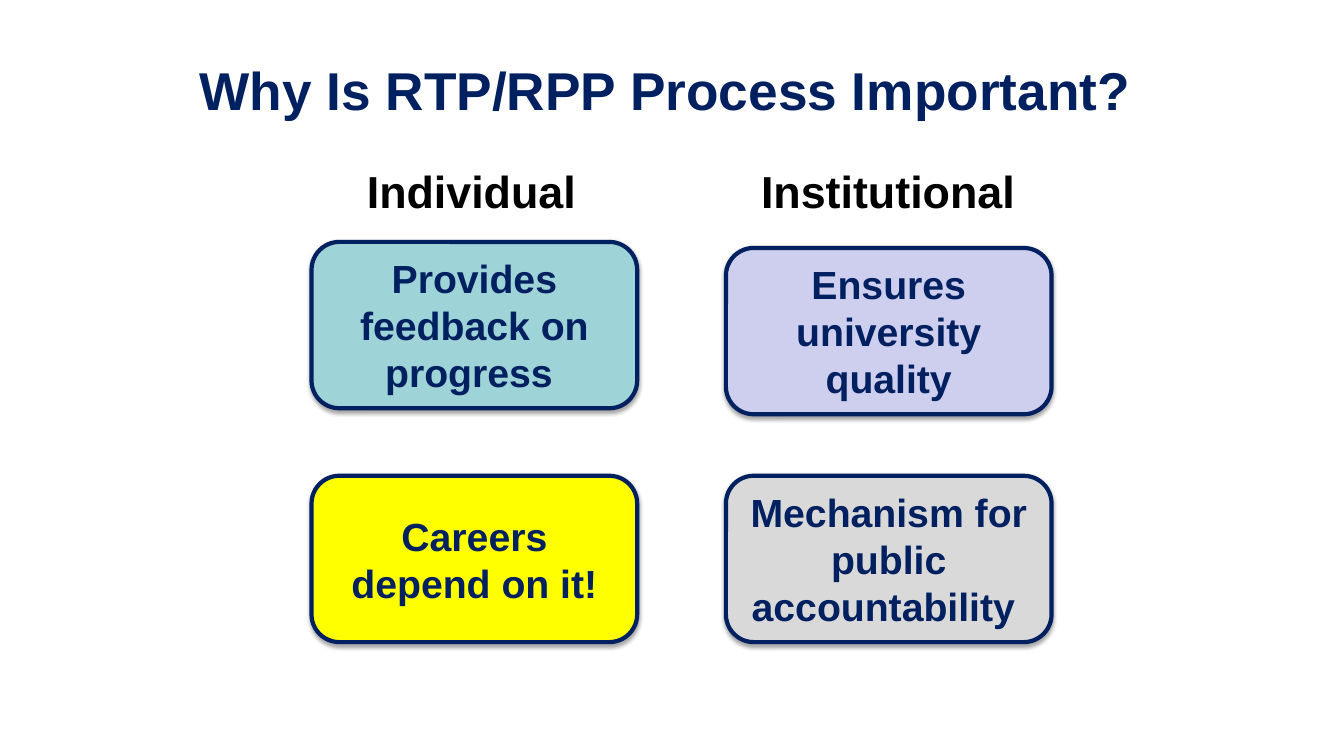
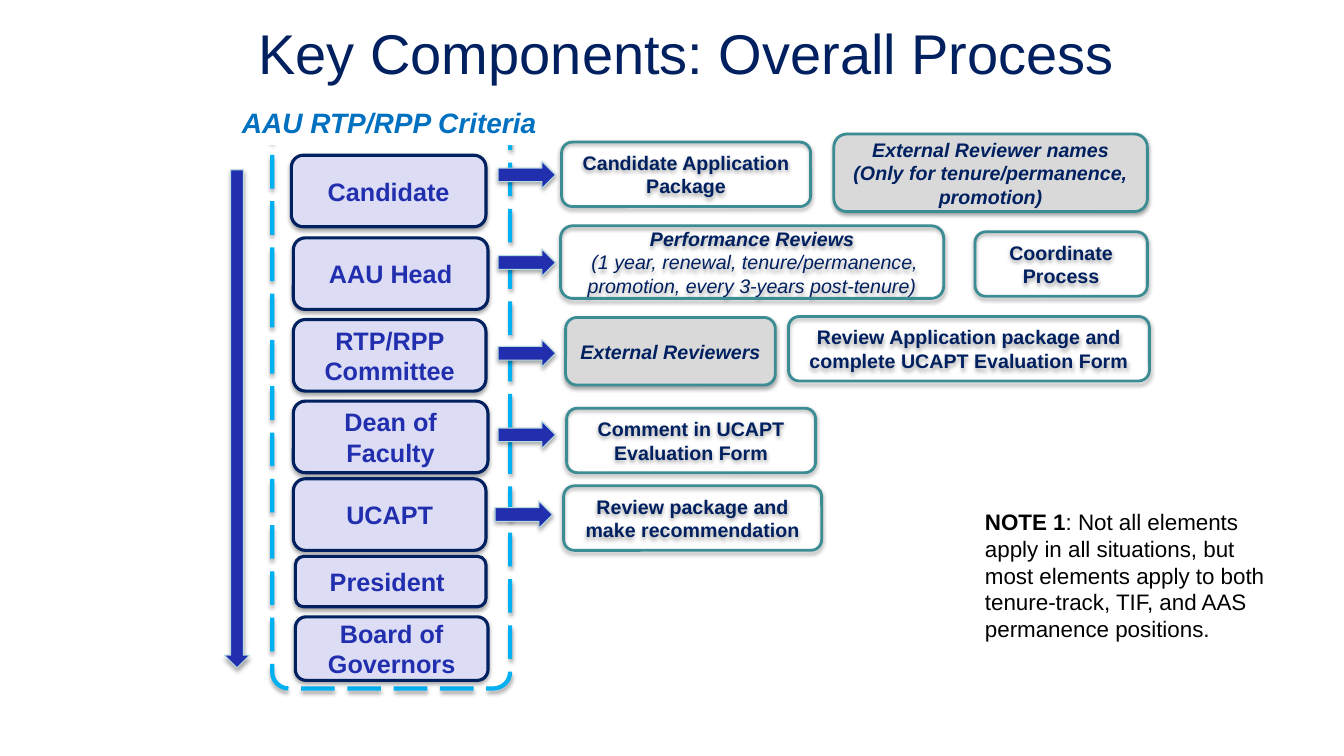
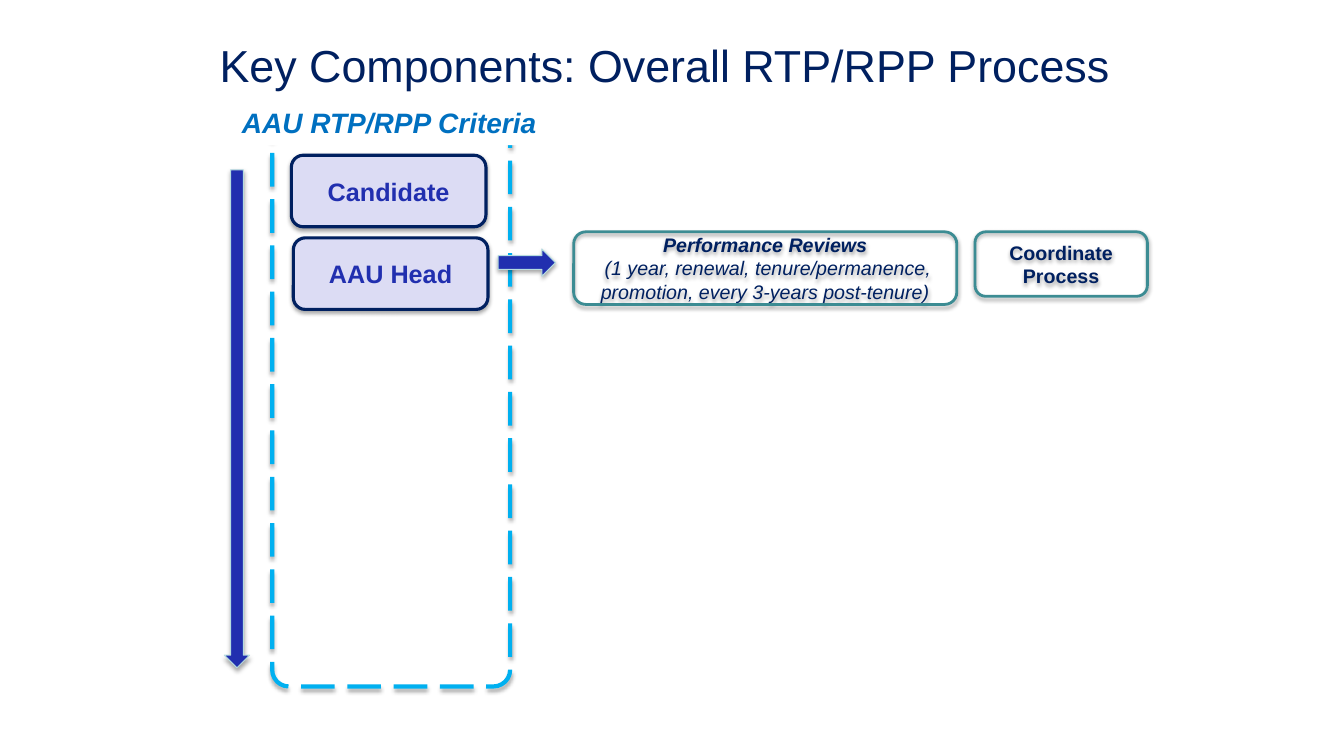
import lxml.etree
import pptx
import pptx.dml.color
import pptx.enum.dml
import pptx.enum.shapes
import pptx.enum.text
import pptx.oxml
import pptx.oxml.ns
import pptx.util

COLORS = {
    "navy": "002060", "indigo": "212FAF", "lavender": "DCDCF4", "lilac": "CECEEF",
    "aqua": "9ED3D7", "yellow": "FFFF00", "grey": "D9D9D9", "teal": "3C8C93",
    "mist": "B6DCDF", "sky": "00B0F0", "blue": "0070C0", "black": "000000", "white": "FFFFFF",
}
FONT = "Arial"
SHADOW = (
    '<a:effectLst xmlns:a="http://schemas.openxmlformats.org/drawingml/2006/main">'
    '<a:outerShdw blurRad="39370" dist="22860" dir="5400000" rotWithShape="0">'
    '<a:srgbClr val="000000"><a:alpha val="35000"/></a:srgbClr>'
    '</a:outerShdw></a:effectLst>'
)
PRESET = pptx.enum.shapes.MSO_SHAPE
LEFT = pptx.enum.text.PP_ALIGN.LEFT
CENTER = pptx.enum.text.PP_ALIGN.CENTER

deck = pptx.Presentation()
deck.slide_width = pptx.util.Inches(13.33)
deck.slide_height = pptx.util.Inches(7.5)
COLUMN = deck.slide_width / 133.3
ROW = deck.slide_height / 75
BLANK = deck.slide_layouts[6]


def add_block(slide, preset, place, fill, line, weight):
    left, top, width, height = place
    block = slide.shapes.add_shape(
        preset, round(left * COLUMN), round(top * ROW), round(width * COLUMN), round(height * ROW))
    if fill:
        block.fill.solid()
        block.fill.fore_color.rgb = pptx.dml.color.RGBColor.from_string(COLORS[fill])
    else:
        block.fill.background()
    block.line.color.rgb = pptx.dml.color.RGBColor.from_string(COLORS[line])
    block.line.width = pptx.util.Pt(weight)
    block.shadow.inherit = False
    effects = block._element.spPr.find(pptx.oxml.ns.qn("a:effectLst"))
    effects.getparent().replace(effects, pptx.oxml.parse_xml(SHADOW))
    return block


def add_text(slide, target, text, size, color, bold=False, italic=False, align=CENTER):
    if isinstance(target, tuple):
        left, top, width, height = target
        target = slide.shapes.add_textbox(
            round(left * COLUMN), round(top * ROW), round(width * COLUMN), round(height * ROW))
        target.text_frame.word_wrap = True
    target.text_frame.text = text
    for paragraph in target.text_frame.paragraphs:
        paragraph.alignment = align
        paragraph.font.name = FONT
        paragraph.font.size = pptx.util.Pt(size)
        paragraph.font.bold = bold
        paragraph.font.italic = italic
        paragraph.font.color.rgb = pptx.dml.color.RGBColor.from_string(COLORS[color])
    return target


TITLES = [
    ("Why Is RTP/RPP Process Important?", (18.8, 5.1, 95.7, 7.4), 38, True, LEFT),
    ("Key Components: Overall Process", (22.3, 1.3, 91.5, 7.7), 40, False, CENTER),
    ("Key Components: Overall RTP/RPP Process", (20.8, 3.2, 94, 6.4), 32, False, LEFT),
]
slides = []
for wording, place, size, bold, align in TITLES:
    slide = deck.slides.add_slide(BLANK)
    title = add_text(slide, place, wording, size, "navy", bold, align=align)
    title.text_frame.vertical_anchor = pptx.enum.text.MSO_ANCHOR.BOTTOM
    slides.append(slide)
importance, overall, head_stage = slides

REASONS = [
    ("Individual", 35.4, 22.9, 30.9, [
        ("Provides feedback on progress ", 24, "aqua"),
        ("Careers depend on it!", 47.2, "yellow")]),
    ("Institutional", 74.5, 27.4, 72, [
        ("Ensures university quality", 24.6, "lilac"),
        ("Mechanism for public accountability ", 47.2, "grey")]),
]
for heading, heading_left, heading_width, left, cards in REASONS:
    label = add_text(importance, (heading_left, 15.8, heading_width, 6.4), heading, 32, "black", True, align=LEFT)
    label.text_frame.word_wrap = False
    for reason, top, fill in cards:
        card = add_block(importance, PRESET.ROUNDED_RECTANGLE, (left, top, 32.3, 16.5), fill, "navy", 3)
        add_text(importance, card, reason, 28, "navy", True)

STEPS = [
    ("Candidate", (28.9, 15.4, 19.3, 7.1)),
    ("AAU Head", (29.1, 23.6, 19.3, 7.1)),
    ("RTP/RPP Committee", (29.1, 31.7, 19.1, 7.1)),
    ("Dean of Faculty", (29.1, 39.8, 19.3, 7.1)),
    ("UCAPT", (29.1, 47.5, 19.1, 7.1)),
    ("President ", (29.3, 55.2, 18.9, 5)),
    ("Board of Governors", (29.3, 61.2, 19.1, 6.3)),
]
HEAD_ARROW = (49.4, 24.7)
REVIEWS = "Performance Reviews\n (1 year, renewal, tenure/permanence, promotion, every 3-years post-tenure)"
COORDINATE = ("Coordinate Process", (96.7, 23, 17.1, 6.4), None, False)
OUTPUTS = [
    ("Candidate Application Package", (55.7, 14.1, 24.7, 6.4), None, False),
    ("External Reviewer names (Only for tenure/permanence, promotion)", (82.7, 13.3, 31.1, 7.7), "grey", True),
    (REVIEWS, (55.6, 22.4, 38, 7.2), None, True),
    COORDINATE,
    ("External Reviewers", (56.1, 31.5, 20.8, 6.7), "grey", True),
    ("Review Application package and complete UCAPT Evaluation Form", (78.2, 31.4, 35.8, 6.4), None, False),
    ("Comment in UCAPT Evaluation Form", (56.2, 40.5, 24.7, 6.4), None, False),
    ("Review package and make recommendation", (55.9, 48.2, 25.6, 6.4), None, False),
]
PROCESSES = [
    (overall, 12.4, STEPS,
     [(49.4, 16), HEAD_ARROW, (49.4, 33.7), (49.4, 41.8), (49.1, 49.7)], OUTPUTS),
    (head_stage, 12.2, STEPS[:2], [HEAD_ARROW],
     [(REVIEWS, (56.9, 23, 38, 7.2), None, True), COORDINATE]),
]
for slide, criteria_top, steps, arrows, outputs in PROCESSES:
    criteria_frame = add_block(
        slide, PRESET.ROUNDED_RECTANGLE, (27, criteria_top, 23.6, 55.9), None, "sky", 3)
    criteria_frame.adjustments[0] = 0.07
    criteria_frame.line.dash_style = pptx.enum.dml.MSO_LINE.LONG_DASH

    timeline = add_block(slide, PRESET.RIGHT_ARROW, (-1.2, 40.3, 49.4, 2.5), "indigo", "mist", 0.75)
    timeline.rotation = 90

    for step, place in steps:
        step_box = add_block(slide, PRESET.ROUNDED_RECTANGLE, place, "lavender", "navy", 2.25)
        add_text(slide, step_box, step, 18, "indigo", True)
    for left, top in arrows:
        add_block(slide, PRESET.RIGHT_ARROW, (left, top, 5.7, 2.7), "indigo", "mist", 0.75)
    for output, place, fill, italic in outputs:
        output_box = add_block(slide, PRESET.ROUNDED_RECTANGLE, place, fill, "teal", 2)
        add_text(slide, output_box, output, 14, "navy", True, italic)
        for detail in output_box.text_frame.paragraphs[1:]:
            detail.font.bold = False

    criteria = add_text(slide, (22.9, 10, 31.4, 4.4), "AAU RTP/RPP Criteria", 20, "blue", True, True)
    criteria.fill.solid()
    criteria.fill.fore_color.rgb = pptx.dml.color.RGBColor.from_string(COLORS["white"])

note = add_text(overall, (96.7, 49.9, 29.8, 14.5), "NOTE 1", 16, "black", align=LEFT)
note_paragraph = note.text_frame.paragraphs[0]
note_paragraph.runs[0].font.bold = True
note_paragraph.add_run().text = (
    ": Not all elements apply in all situations, but most elements apply to both "
    "tenure-track, TIF, and AAS permanence positions.")

deck.save("out.pptx")
